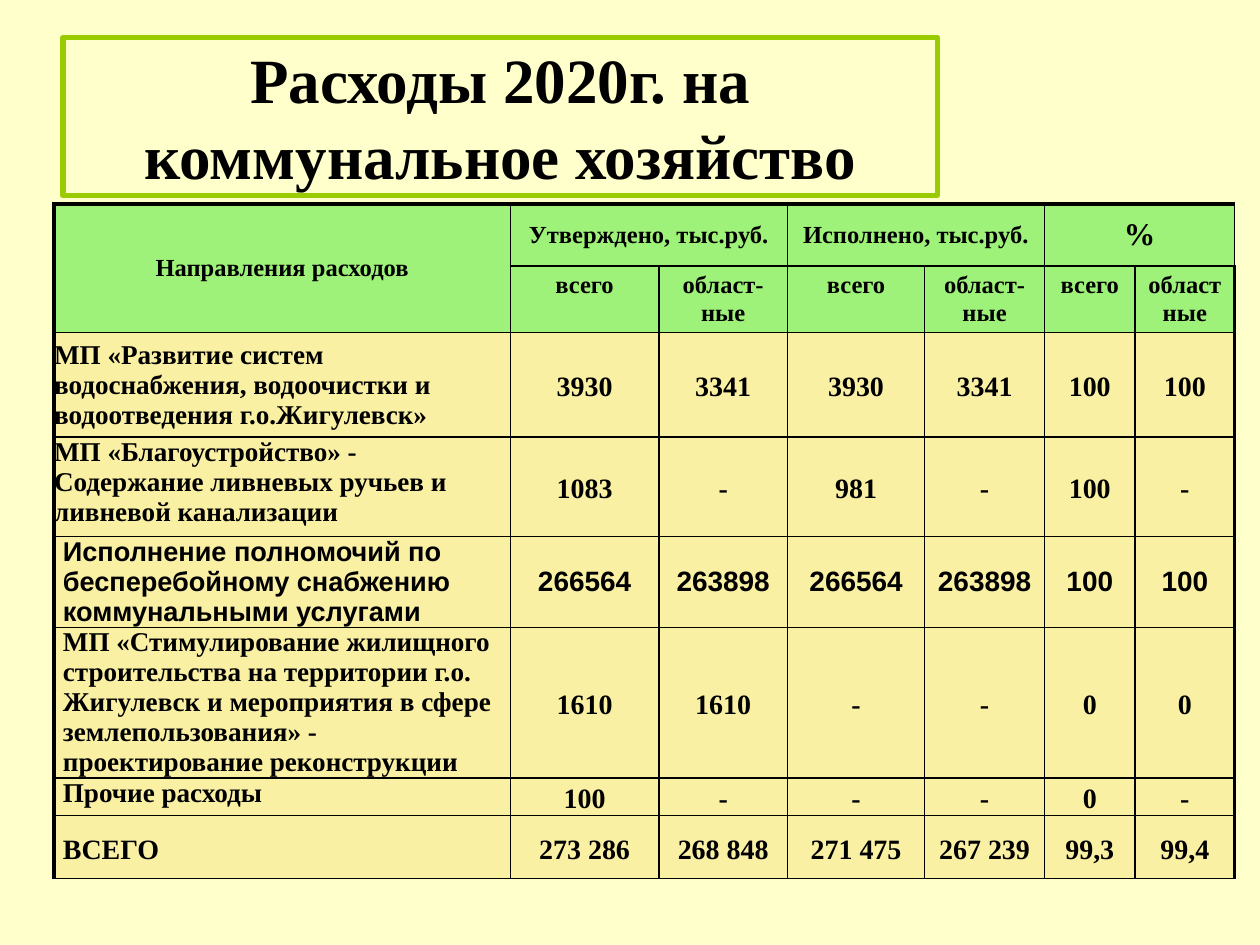
"""Build a slide with a table of 2020 municipal utility spending."""
from lxml import etree
from pptx import Presentation, util as u
from pptx.dml.color import RGBColor
from pptx.enum import shapes, text
from pptx.oxml import ns

THEME = {
    "page": "FFFFCC", "frame": "99CC00", "ink": "000000",
    "head": "3EE527", "body": "FAF0A4", "head_alpha": 50000,
    "serif": "Times New Roman", "sans": "Arial",
    "title": 36, "heading": 14, "percent": 18, "label": 15.5, "value": 16,
    "outer": 2.25, "inner": 1, "frame_width": 3,
}
TITLE = "Расходы 2020г. на коммунальное хозяйство"
TITLE_BOX = (0.5, 0.3, 6.94, 1.25)
TABLE_ORIGIN = (0.43, 1.62)
COLUMNS = [3.62, 1.18, 1.02, 1.09, 0.95, 0.72, 0.79]
ROWS = [0.49, 0.53, 0.83, 0.79, 0.72, 1.19, 0.3, 0.5]
HEADINGS = ["Направления расходов", "Утверждено, тыс.руб.", "Исполнено, тыс.руб.", "%"]
SUBHEADINGS = ["всего", "област-ные", "всего", "област-ные", "всего", "областные"]
SPENDING = [
    ("МП «Развитие систем водоснабжения, водоочистки и водоотведения г.о.Жигулевск»",
     ["3930", "3341", "3930", "3341", "100", "100"],
     {"inset": (0, 0), "anchor": "MIDDLE"}),
    ("МП «Благоустройство» - Содержание ливневых ручьев и ливневой канализации",
     ["1083", "-", "981", "-", "100", "-"], {"inset": (0, 0)}),
    ("Исполнение полномочий по бесперебойному снабжению коммунальными услугами",
     ["266564", "263898", "266564", "263898", "100", "100"],
     {"face": "sans", "spacing": 1}),
    ("МП «Стимулирование жилищного строительства на территории г.о. Жигулевск и "
     "мероприятия в сфере землепользования» - проектирование реконструкции",
     ["1610", "1610", "-", "-", "0", "0"], {}),
    ("Прочие расходы", ["100", "-", "-", "-", "0", "-"], {}),
    ("ВСЕГО", ["273 286", "268 848", "271 475", "267 239", "99,3", "99,4"],
     {"size": "value", "anchor": "MIDDLE", "label_spacing": 1.15}),
]


def color(name):
    return RGBColor.from_string(THEME[name])


def assign(target, values):
    for name, value in values.items():
        setattr(target, name, value)


def write(frame, words, size, face="serif", align="CENTER", spacing=1):
    paragraph = frame.paragraphs[0]
    assign(paragraph, {"alignment": text.PP_ALIGN[align], "line_spacing": spacing})
    run = paragraph.add_run()
    run.text = words
    assign(run.font, {"name": THEME[face], "size": u.Pt(THEME[size]), "bold": True})
    run.font.color.rgb = color("ink")


def write_cell(cell, words, size, inset, anchor="MIDDLE", **style):
    side, edge = map(u.Inches, inset)
    assign(cell, {"margin_left": side, "margin_right": side, "margin_top": edge,
                  "margin_bottom": edge, "vertical_anchor": text.MSO_ANCHOR[anchor]})
    write(cell.text_frame, words, size, **style)


def paint(cell, row, column):
    properties = cell._tc.get_or_add_tcPr()
    outside = {"L": column == 0, "R": column == len(COLUMNS) - 1, "T": row == 0, "B": False}
    for side, is_outer in outside.items():
        width = THEME["outer" if is_outer else "inner"]
        line = etree.SubElement(properties, ns.qn(f"a:ln{side}"), w=str(u.Pt(width)))
        fill = etree.SubElement(line, ns.qn("a:solidFill"))
        etree.SubElement(fill, ns.qn("a:srgbClr"), val=THEME["ink"])
    cell.fill.solid()
    cell.fill.fore_color.rgb = color("head" if row < 2 else "body")
    if row < 2:
        shade = properties.find(".//" + ns.qn("a:solidFill") + "[last()]/" + ns.qn("a:srgbClr")
                                + f"[@val='{THEME['head']}']")
        etree.SubElement(shade, ns.qn("a:alpha"), val=str(THEME["head_alpha"]))


def add_title(slide):
    shape = slide.shapes.add_shape(shapes.MSO_SHAPE.RECTANGLE, *map(u.Inches, TITLE_BOX))
    shape.shadow.inherit = False
    shape.fill.background()
    shape.line.color.rgb = color("frame")
    shape.line.width = u.Pt(THEME["frame_width"])
    assign(shape.text_frame, {"word_wrap": True, "vertical_anchor": text.MSO_ANCHOR.MIDDLE})
    write(shape.text_frame, TITLE, "title")


def add_spending_table(slide):
    place = (*TABLE_ORIGIN, sum(COLUMNS), sum(ROWS))
    table = slide.shapes.add_table(len(ROWS), len(COLUMNS), *map(u.Inches, place)).table
    assign(table, {"first_row": False, "horz_banding": False})
    for column, width in zip(table.columns, COLUMNS):
        column.width = u.Inches(width)
    for row, height in zip(table.rows, ROWS):
        row.height = u.Inches(height)
    for row in range(len(ROWS)):
        for column in range(len(COLUMNS)):
            paint(table.cell(row, column), row, column)

    table.cell(0, 0).merge(table.cell(1, 0))
    for index, words in enumerate(HEADINGS):
        column = max(0, 2 * index - 1)
        if index:
            table.cell(0, column).merge(table.cell(0, column + 1))
        size = "percent" if words == "%" else "heading"
        write_cell(table.cell(0, column), words, size, (0.1, 0.05))
    for column, words in enumerate(SUBHEADINGS, 1):
        write_cell(table.cell(1, column), words, "heading", (0.1, 0.05), "TOP")

    for row, (label, values, style) in enumerate(SPENDING, 2):
        face = style.get("face", "serif")
        write_cell(table.cell(row, 0), label, style.get("size", "label"),
                   style.get("inset", (0.07, 0)), style.get("anchor", "TOP"),
                   face=face, align="LEFT", spacing=style.get("label_spacing", 1))
        for column, value in enumerate(values, 1):
            write_cell(table.cell(row, column), value, "value", (0.07, 0),
                       face=face, spacing=style.get("spacing", 1.15))


def main():
    presentation = Presentation()
    assign(presentation, {"slide_width": u.Inches(10), "slide_height": u.Inches(7.5)})
    slide = presentation.slides.add_slide(presentation.slide_layouts[6])
    slide.background.fill.solid()
    slide.background.fill.fore_color.rgb = color("page")
    add_title(slide)
    add_spending_table(slide)
    presentation.save("out.pptx")


if __name__ == "__main__":
    main()
